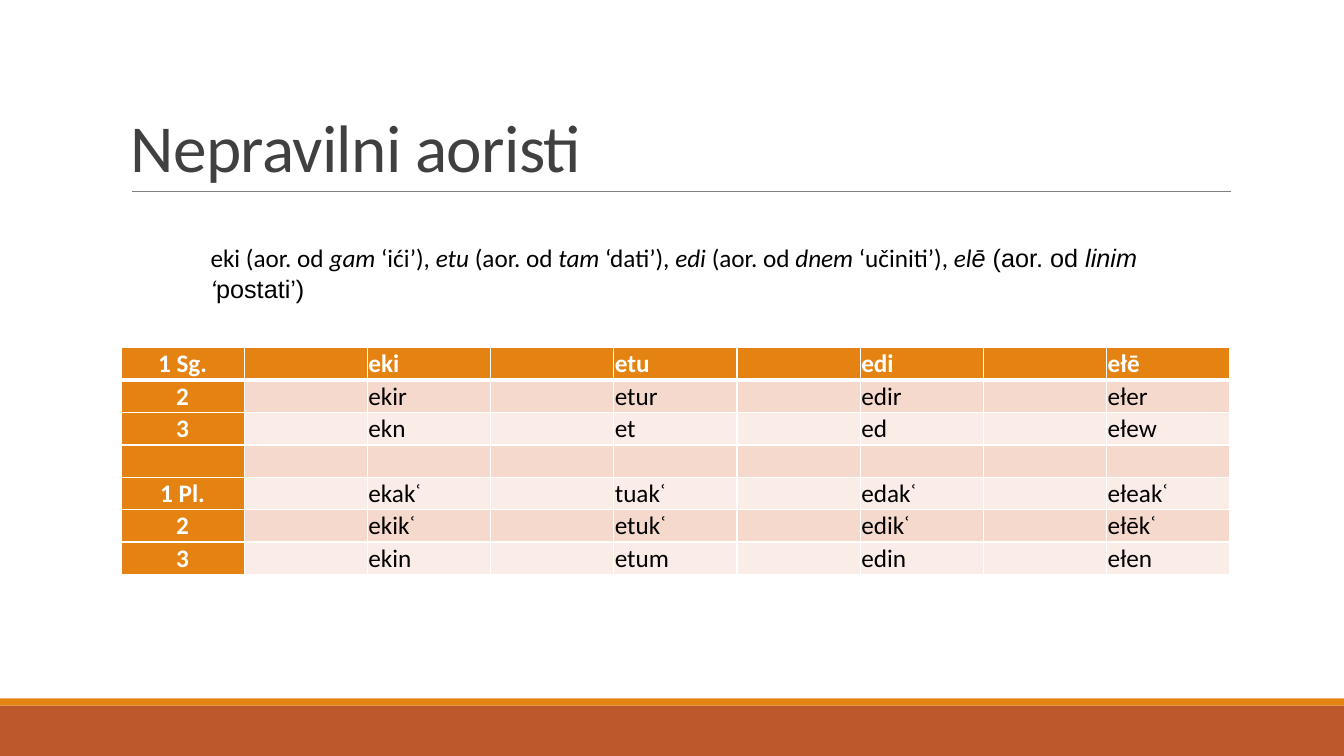
import pptx
import pptx.dml.color
import pptx.enum.shapes
import pptx.enum.text
import pptx.oxml
import pptx.oxml.ns
import pptx.util
from pptx.util import Inches

COLORS = {
    "white": "FFFFFF", "black": "000000", "heading": "404040", "rule": "808080",
    "orange": "E48312", "rust": "BD582C", "band_dark": "F5D9CC", "band_light": "FAEDE7",
}
INSETS = ("margin_left", "margin_top", "margin_right", "margin_bottom")


def apply(target, values):
    for name, value in values.items():
        setattr(target, name, value)


class AoristSlide:
    """Draws the elements of one slide in a shared style."""

    def __init__(self, slide):
        self.slide = slide
        self.font = "Calibri"

    def color(self, name):
        return pptx.dml.color.RGBColor.from_string(COLORS[name])

    def fill(self, target, name):
        target.fill.solid()
        target.fill.fore_color.rgb = self.color(name)

    def bar(self, top, height, color):
        bar = self.slide.shapes.add_shape(
            pptx.enum.shapes.MSO_SHAPE.RECTANGLE, 0, Inches(top), Inches(13.33), Inches(height))
        bar.shadow.inherit = False
        self.fill(bar, color)
        bar.line.fill.background()

    def rule(self, left, right, top):
        rule = self.slide.shapes.add_connector(
            pptx.enum.shapes.MSO_CONNECTOR.STRAIGHT,
            Inches(left), Inches(top), Inches(right), Inches(top))
        rule.line.color.rgb = self.color("rule")
        rule.line.width = pptx.util.Pt(0.5)
        rule._element.spPr.append(pptx.oxml.parse_xml(
            f'<a:effectLst {pptx.oxml.ns.nsdecls("a")}/>'))

    def run(self, paragraph, wording, color, size=18, **style):
        run = paragraph.add_run()
        run.text = wording
        apply(run.font, {"name": self.font, "size": pptx.util.Pt(size), **style})
        run.font.color.rgb = self.color(color)
        return run

    def text(self, left, top, width, height, **frame_format):
        frame = self.slide.shapes.add_textbox(
            Inches(left), Inches(top), Inches(width), Inches(height)).text_frame
        apply(frame, {"word_wrap": True, **frame_format})
        return frame.paragraphs[0]

    def title(self, wording):
        heading = self.text(1.2, 0.31, 11, 1.59,
                            vertical_anchor=pptx.enum.text.MSO_ANCHOR.BOTTOM)
        heading.line_spacing = 0.85
        self.run(heading, wording, "heading", 48)._r.get_or_add_rPr().set("spc", "-50")

    def borders(self, cell, widths):
        properties = cell._tc.get_or_add_tcPr()
        for place, (side, width) in enumerate(widths.items()):
            properties.insert(place, pptx.oxml.parse_xml(
                f'<a:ln{side} {pptx.oxml.ns.nsdecls("a")} w="{pptx.util.Pt(width)}">'
                f'<a:solidFill><a:srgbClr val="{COLORS["white"]}"/></a:solidFill></a:ln{side}>'))

    def table(self, left, top, width, height, rows):
        columns = 2 * len(rows[0]) - 1
        table = self.slide.shapes.add_table(
            len(rows), columns, Inches(left), Inches(top), Inches(width), Inches(height)).table
        for row, forms in enumerate(rows):
            for column in range(columns):
                cell = table.cell(row, column)
                apply(cell, dict.fromkeys(INSETS, Inches(0.01)))
                is_label, is_head = column == 0, row == 0
                strong = is_label or is_head
                band = "band_dark" if row % 2 else "band_light"
                self.fill(cell, "orange" if strong else band)
                self.borders(cell, {"L": 1, "R": 1, "T": 3 if row == 1 else 1,
                                    "B": 3 if is_head else 1})
                paragraph = cell.text_frame.paragraphs[0]
                if is_label:
                    paragraph.alignment = pptx.enum.text.PP_ALIGN.CENTER
                if column % 2 == 0 and forms[column // 2]:
                    self.run(paragraph, forms[column // 2],
                             "white" if strong else "black", bold=strong)


def main():
    presentation = pptx.Presentation()
    apply(presentation, {"slide_width": Inches(13.33), "slide_height": Inches(7.5)})
    page = AoristSlide(presentation.slides.add_slide(presentation.slide_layouts[6]))

    page.bar(7, 0.5, "rust")
    page.bar(6.93, 0.07, "orange")
    page.rule(1.31, 12.21, 1.9)
    page.title("Nepravilni aoristi")

    page.table(1.2, 3.45, 11, 2.25, [
        ("1 Sg.", "eki", "etu", "edi", "ełē"),
        ("2", "ekir", "etur", "edir", "ełer"),
        ("3", "ekn", "et", "ed", "ełew"),
        ("", "", "", "", ""),
        ("1 Pl.", "ekakʿ", "tuakʿ", "edakʿ", "ełeakʿ"),
        ("2", "ekikʿ", "etukʿ", "edikʿ", "ełēkʿ"),
        ("3", "ekin", "etum", "edin", "ełen"),
    ])

    verbs = page.text(1.99, 2.36, 10.2, 0.4)
    glosses = ["eki (aor. od ", "gam", " ‘ići’), ", "etu ", "(aor. od ", "tam ", "‘dati’), ",
               "edi ", "(aor. od ", "dnem ", "‘učiniti’), ", "el"]
    for place, wording in enumerate(glosses):
        page.run(verbs, wording, "black", italic=place % 2 == 1)
    for place, wording in enumerate(["ē ", "(aor. od ", "linim ‘", "postati’)"]):
        page.run(verbs, wording, "black", name="Arial", italic=place % 2 == 0)

    presentation.save("out.pptx")


if __name__ == "__main__":
    main()
